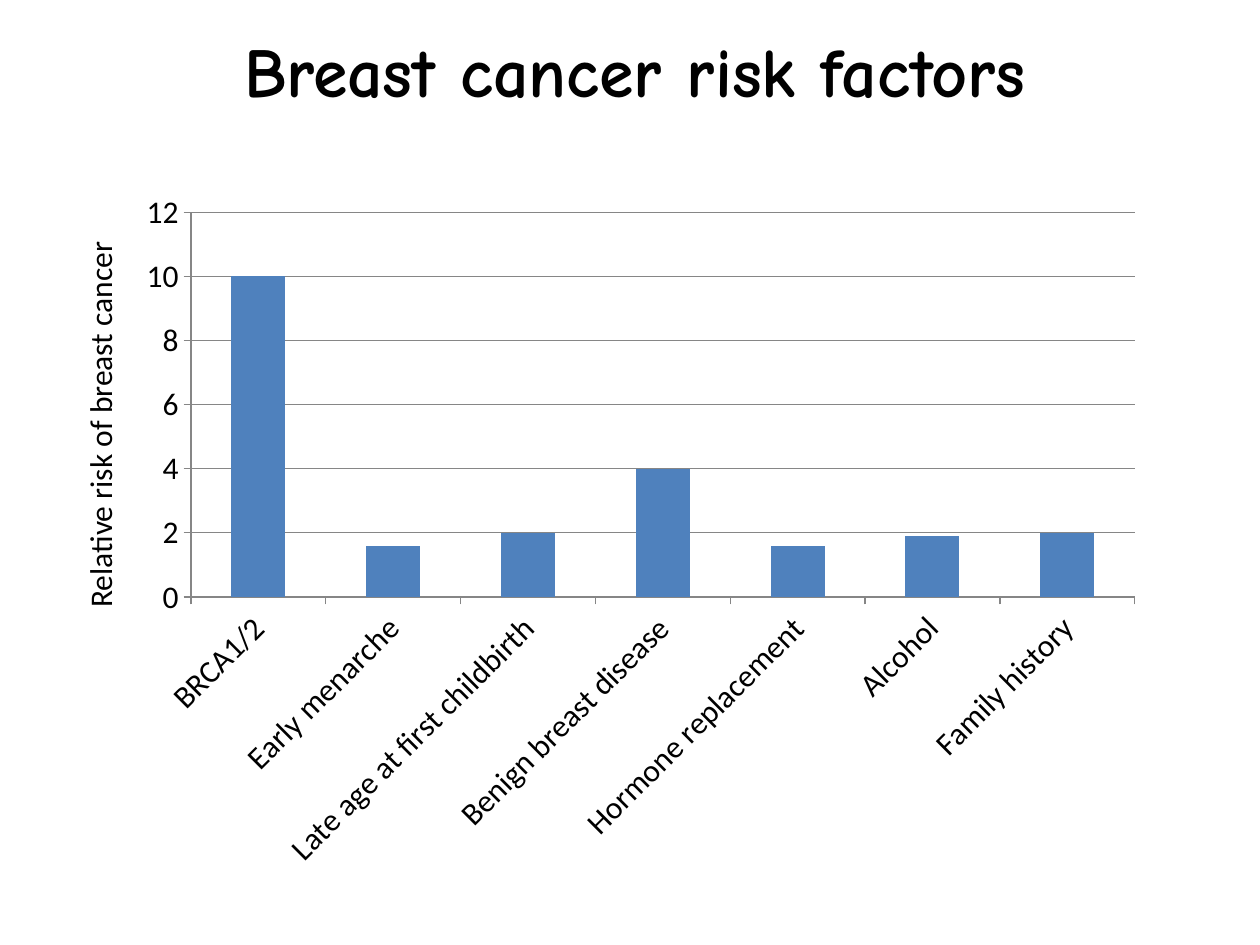
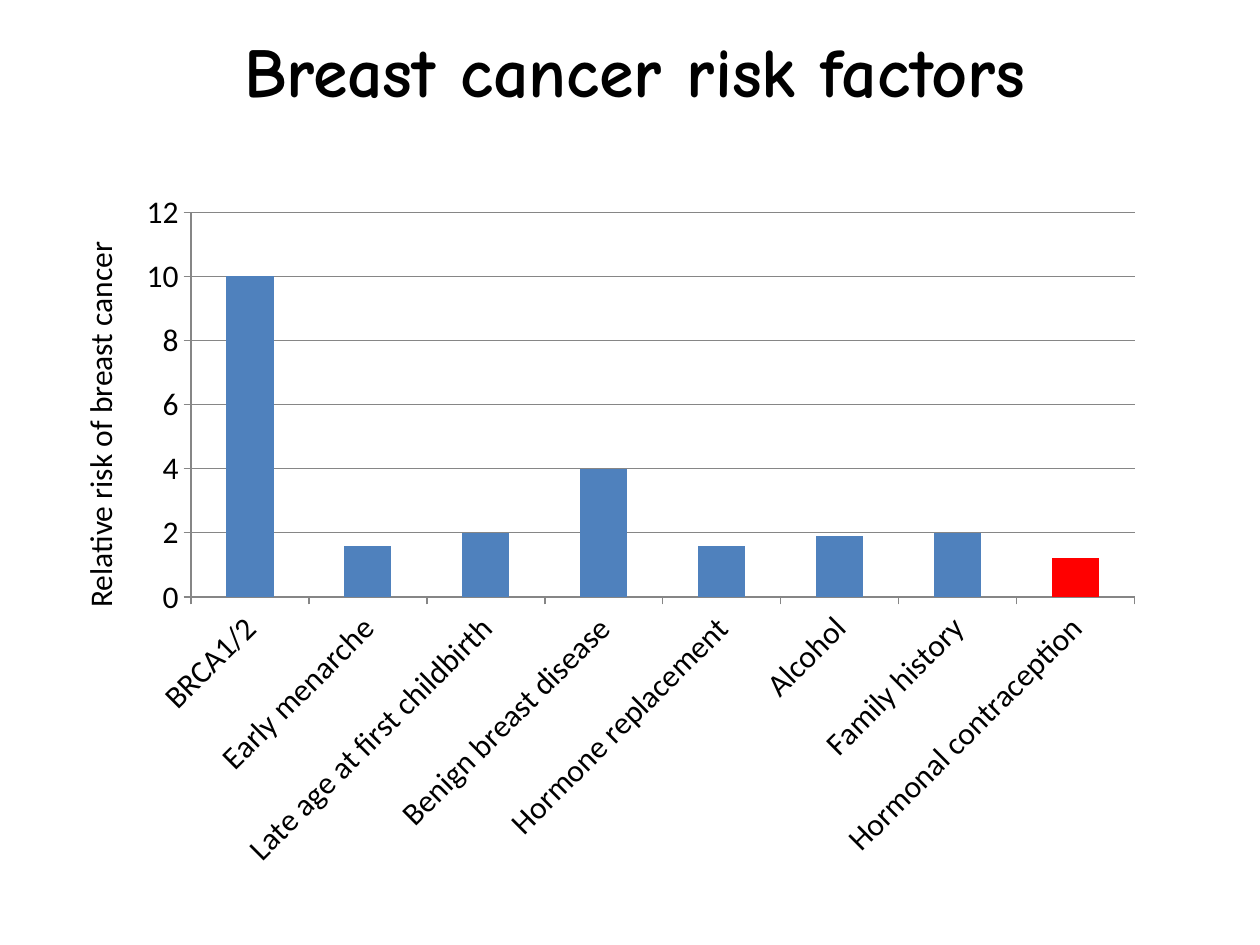
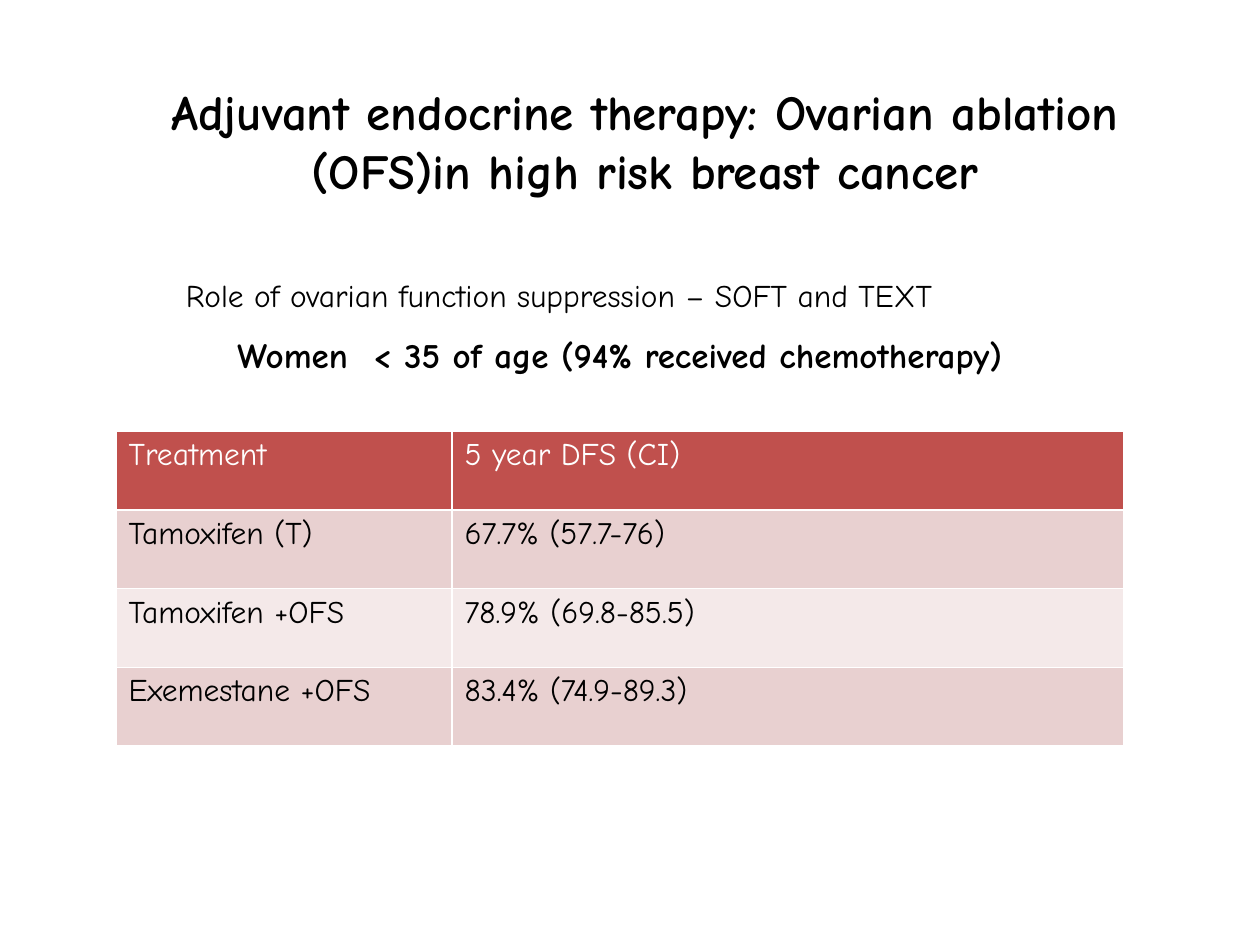
from dataclasses import dataclass

from pptx import Presentation
from pptx import util as u
from pptx.chart import data as chart_data
from pptx.dml.color import RGBColor
from pptx.enum import chart as chart_enum, text


@dataclass(frozen=True)
class Theme:
    ink: str = "000000"
    paper: str = "FFFFFF"
    bar: str = "4F81BD"
    highlight: str = "FF0000"
    axis: str = "868686"
    header: str = "C0504D"
    bands: tuple = ("E8D0D0", "F4E9E9")
    heading_font: str = "Comic Neue"
    chart_font: str = "Calibri"
    title_size: int = 40
    long_title_size: int = 28
    subtitle_size: int = 20
    body_size: int = 18


THEME = Theme()

RISK_TITLE = "Breast cancer risk factors"
RISK_AXIS = "Relative risk of breast cancer"
RISKS = [
    ("BRCA1/2", 10),
    ("Early menarche", 1.6),
    ("Late age at first childbirth", 2),
    ("Benign breast disease", 4),
    ("Hormone replacement", 1.6),
    ("Alcohol", 1.9),
    ("Family history", 2),
]
CONTRACEPTION = ("Hormonal contraception", 1.2)

THERAPY_TITLE = "Adjuvant endocrine therapy: Ovarian ablation (OFS)in high risk breast cancer"
TRIALS = "Role of ovarian function suppression – SOFT and TEXT"
COHORT = "Women  < 35 of age (94% received chemotherapy)"
SURVIVAL = [
    ("Treatment", "5 year DFS (CI)"),
    ("Tamoxifen (T)", "67.7% (57.7-76)"),
    ("Tamoxifen +OFS", "78.9% (69.8-85.5)"),
    ("Exemestane +OFS", "83.4% (74.9-89.3)"),
]

# Left, top, width, height in centimetres
RISK_TITLE_AREA = (1.47, 0.43, 22.66, 1.96)
CHART_AREA = (2.54, 3.61, 20.75, 14.17)
AXIS_LABEL_AREA = (-5.51, 7.01, 15.04, 1.02)
AXIS_LABEL_INDENT = 2.79
THERAPY_TITLE_AREA = (2.74, 1.52, 20.52, 2.64)
TRIALS_AREA = (3.5, 5.44, 17.98, 1.02)
COHORT_AREA = (2.34, 6.6, 20.32, 1.1)
TABLE_AREA = (2.34, 8.69, 20.32, 6.35)
TABLE_SHARES = (1 / 3, 2 / 3)


def place(area):
    return [u.Cm(length) for length in area]


def rgb(code):
    return RGBColor.from_string(code)


def style(font, size, name=THEME.heading_font, color=THEME.ink, bold=False):
    font.size, font.name, font.bold = u.Pt(size), name, bold
    font.color.rgb = rgb(color)


def write(box, words, align=text.PP_ALIGN.LEFT, **font):
    frame = box.text_frame
    frame.text = words
    frame.word_wrap = True
    frame.auto_size = text.MSO_AUTO_SIZE.NONE
    frame.vertical_anchor = text.MSO_ANCHOR.TOP
    para = frame.paragraphs[0]
    para.alignment = align
    style(para.font, **font)


def add_page(deck, title, area, size):
    page = deck.slides.add_slide(deck.slide_layouts[5])
    box = page.shapes.title
    box.left, box.top, box.width, box.height = place(area)
    write(box, title, text.PP_ALIGN.CENTER, size=size, bold=True)
    return page


def add_text(page, words, area, **options):
    box = page.shapes.add_textbox(*place(area))
    write(box, words, **options)
    return box


def style_axis(axis):
    axis.format.line.color.rgb = rgb(THEME.axis)
    axis.major_tick_mark = chart_enum.XL_TICK_MARK.OUTSIDE
    axis.minor_tick_mark = chart_enum.XL_TICK_MARK.NONE
    style(axis.tick_labels.font, THEME.body_size, THEME.chart_font)


def add_risk_chart(page, risks, highlighted):
    data = chart_data.CategoryChartData()
    data.categories = [name for name, _ in risks]
    data.add_series("Series 1", [value for _, value in risks])
    chart = page.shapes.add_chart(
        chart_enum.XL_CHART_TYPE.COLUMN_CLUSTERED, *place(CHART_AREA), data).chart
    chart.has_legend = chart.has_title = False
    style(chart.font, THEME.body_size, THEME.chart_font)

    plot = chart.plots[0]
    plot.gap_width, plot.vary_by_categories = 150, False
    bars = plot.series[0]
    bars.format.fill.solid()
    bars.format.fill.fore_color.rgb = rgb(THEME.bar)
    for index, risk in enumerate(risks):
        if risk == highlighted:
            fill = bars.points[index].format.fill
            fill.solid()
            fill.fore_color.rgb = rgb(THEME.highlight)

    style_axis(chart.category_axis)
    label_body = chart.category_axis._element.txPr.bodyPr
    label_body.set("rot", "-2700000")
    label_body.set("vert", "horz")

    scale = chart.value_axis
    style_axis(scale)
    scale.minimum_scale, scale.maximum_scale, scale.major_unit = 0, 12, 2
    scale.has_major_gridlines = True
    scale.major_gridlines.format.line.color.rgb = rgb(THEME.axis)


def add_risk_page(deck, risks, highlighted=None):
    page = add_page(deck, RISK_TITLE, RISK_TITLE_AREA, THEME.title_size)
    add_risk_chart(page, risks, highlighted)
    label = add_text(page, RISK_AXIS, AXIS_LABEL_AREA,
                     size=THEME.body_size, name=THEME.chart_font)
    label.rotation = 270
    label.text_frame.margin_left = u.Cm(AXIS_LABEL_INDENT)


def add_survival_table(page):
    table = page.shapes.add_table(
        len(SURVIVAL), len(TABLE_SHARES), *place(TABLE_AREA)).table
    for column, share in zip(table.columns, TABLE_SHARES):
        column.width = u.Cm(TABLE_AREA[2] * share)
    for row, values in enumerate(SURVIVAL):
        fill = THEME.bands[(row - 1) % 2] if row else THEME.header
        ink = THEME.ink if row else THEME.paper
        for column, value in enumerate(values):
            cell = table.cell(row, column)
            cell.text = value
            cell.fill.solid()
            cell.fill.fore_color.rgb = rgb(fill)
            style(cell.text_frame.paragraphs[0].font, THEME.body_size, color=ink)


def add_therapy_page(deck):
    page = add_page(deck, THERAPY_TITLE, THERAPY_TITLE_AREA, THEME.long_title_size)
    add_text(page, COHORT, COHORT_AREA, align=text.PP_ALIGN.CENTER,
             size=THEME.subtitle_size, bold=True)
    add_survival_table(page)
    add_text(page, TRIALS, TRIALS_AREA, size=THEME.body_size)


def main():
    deck = Presentation()
    deck.slide_width, deck.slide_height = u.Cm(25.4), u.Cm(19.05)
    add_risk_page(deck, RISKS)
    add_risk_page(deck, RISKS + [CONTRACEPTION], highlighted=CONTRACEPTION)
    add_therapy_page(deck)
    deck.save("out.pptx")


if __name__ == "__main__":
    main()
